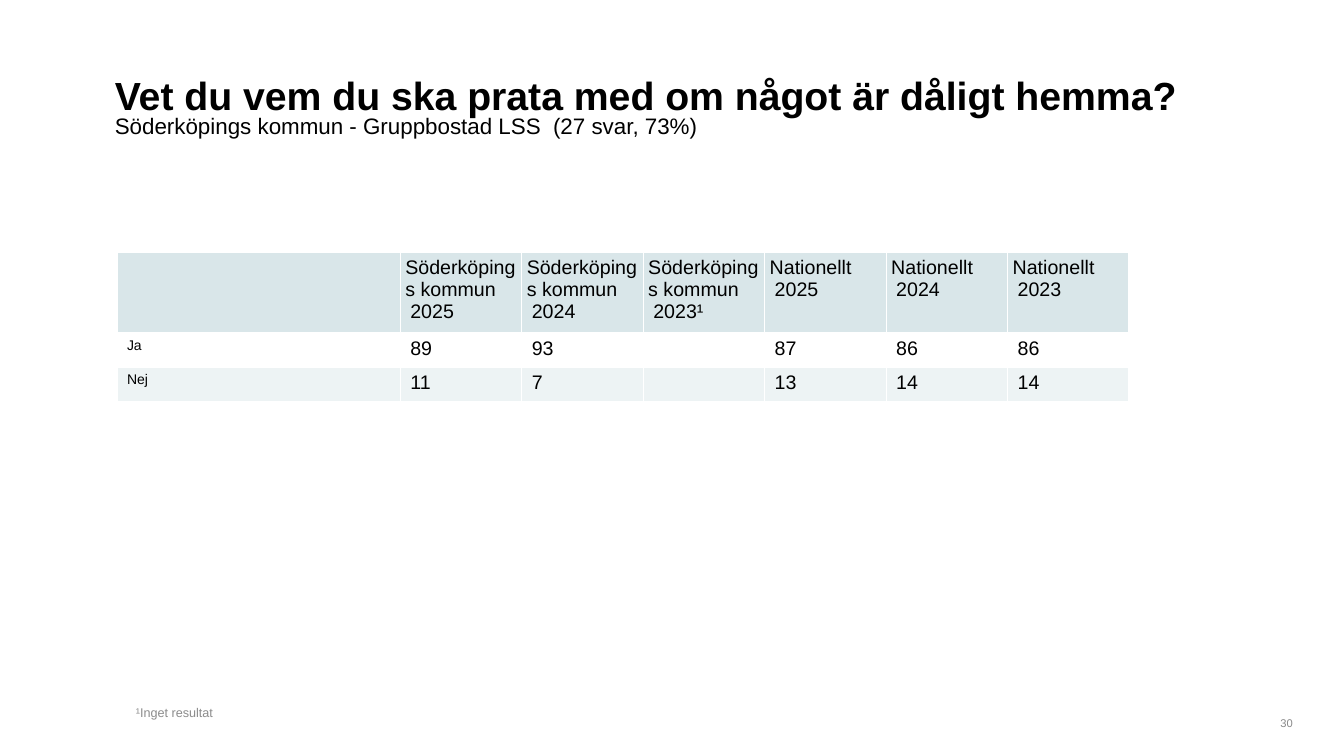
from pptx import Presentation
from pptx.dml.color import RGBColor
from pptx.enum.text import MSO_ANCHOR, PP_ALIGN
from pptx.util import Inches, Pt

BLACK = RGBColor(0x00, 0x00, 0x00)
WHITE = RGBColor(0xFF, 0xFF, 0xFF)
NOTE_GRAY = RGBColor(0x8C, 0x8C, 0x8C)
NUMBER_GRAY = RGBColor(0x89, 0x89, 0x89)
HEADER_FILL = RGBColor(0xD9, 0xE6, 0xE9)
BAND_FILL = RGBColor(0xED, 0xF3, 0xF4)
TOP, BOTTOM = MSO_ANCHOR.TOP, MSO_ANCHOR.BOTTOM
LEFT, RIGHT = PP_ALIGN.LEFT, PP_ALIGN.RIGHT


def add_run(p, text, **fmt):
    r = p.add_run()
    r.text = text
    r.font.name = "Arial"
    r.font.color.rgb = fmt.pop("color", BLACK)
    for name, value in fmt.items():
        setattr(r.font, name, value)


prs = Presentation()
prs.slide_width, prs.slide_height = Inches(13.33), Inches(7.5)
s = prs.slides.add_slide(prs.slide_layouts[6])

# Title, subtitle, footnote and slide number
texts = [
    ("Vet du vem du ska prata med om något är dåligt hemma?",
     (1.04, 0.62, 11.25, 0.42), 0.09, TOP, LEFT, dict(size=Pt(28), bold=True)),
    ("Söderköpings kommun - Gruppbostad LSS  (27 svar, 73%)",
     (1.04, 1.04, 11.25, 0.42), 0.07, TOP, LEFT, dict(size=Pt(16))),
    ("¹Inget resultat",
     (1.25, 3.23, 7.6, 3.96), 0.05, BOTTOM, LEFT, dict(size=Pt(9), color=NOTE_GRAY)),
    ("30",
     (12.5, 7.08, 0.42, 0.21), 0.05, BOTTOM, RIGHT, dict(size=Pt(8), color=NUMBER_GRAY)),
]
for text, box, margin_top, anchor, align, fmt in texts:
    tf = s.shapes.add_textbox(*map(Inches, box)).text_frame
    tf.word_wrap = True
    tf.margin_top = Inches(margin_top)
    tf.vertical_anchor = anchor
    p = tf.paragraphs[0]
    p.alignment = align
    add_run(p, text, **fmt)

# Results table: header cells hold an area and a year
areas = ["Söderköpings kommun"] * 3 + ["Nationellt"] * 3
years = ["2025", "2024", "2023¹", "2025", "2024", "2023"]
rows = [
    [""] + [f"{area}\n{year}" for area, year in zip(areas, years)],
    ["Ja", "89", "93", "", "87", "86", "86"],
    ["Nej", "11", "7", "", "13", "14", "14"],
]
col_widths = [2.81] + [1.205] * 6
row_heights = [0.8, 0.34, 0.34]
row_fills = [HEADER_FILL, WHITE, BAND_FILL]

table = s.shapes.add_table(len(rows), len(col_widths), Inches(1.16), Inches(2.5),
                           Inches(sum(col_widths)), Inches(sum(row_heights))).table
table.first_row = table.horz_banding = False
for col, width in zip(table.columns, col_widths):
    col.width = Inches(width)

for i, values in enumerate(rows):
    table.rows[i].height = Inches(row_heights[i])
    for j, value in enumerate(values):
        cell = table.cell(i, j)
        cell.fill.solid()
        cell.fill.fore_color.rgb = row_fills[i]
        for side in ("left", "right", "top", "bottom"):
            setattr(cell, f"margin_{side}", Inches(0.05))
        size = 10 if j == 0 else 14
        tf = cell.text_frame
        lines = value.split("\n")
        for k, line in enumerate(lines):
            p = tf.paragraphs[0] if k == 0 else tf.add_paragraph()
            if line:
                add_run(p, line, size=Pt(size))
            else:
                p._p.get_or_add_endParaRPr().set("sz", str(size * 100))
            # The area name stands flush; years and values are indented
            if k == len(lines) - 1:
                p._p.get_or_add_pPr().set("marL", str(Inches(0.05)))

prs.save("out.pptx")
